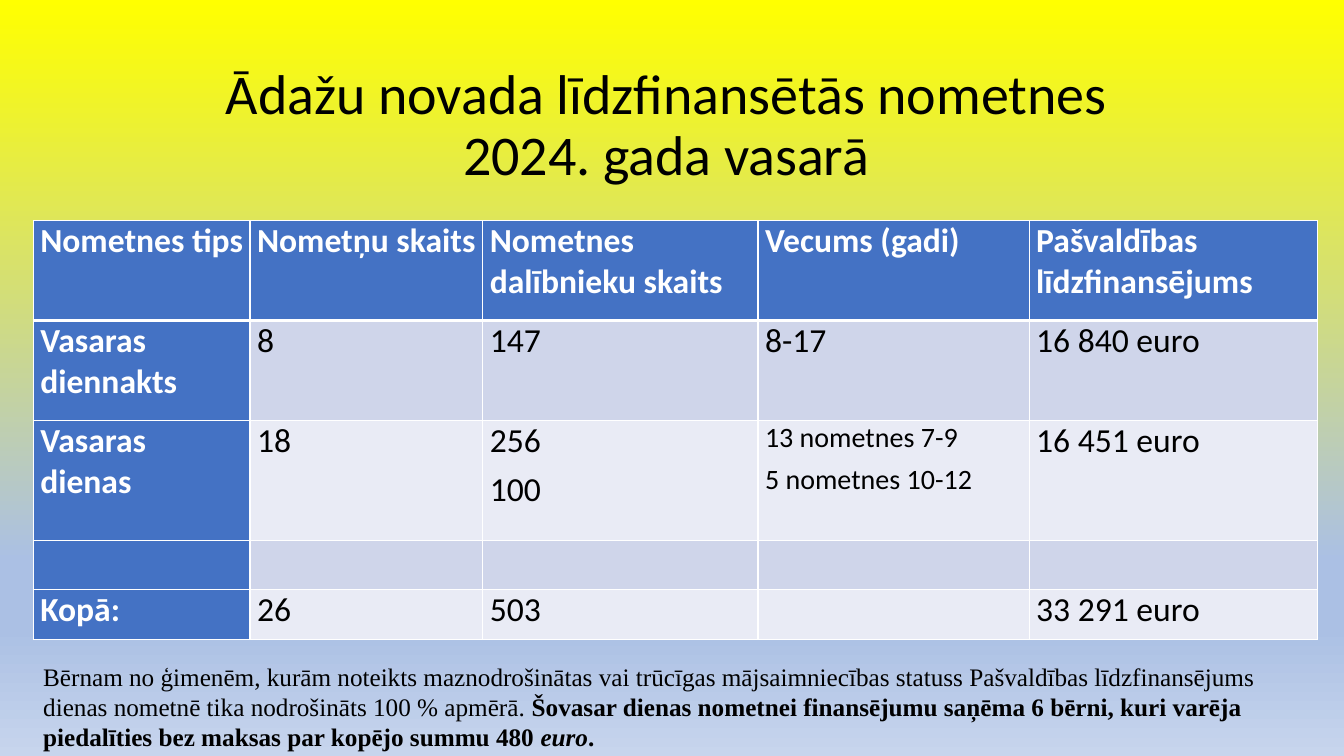
"""Build the slide on co-financed summer camps in Ādaži municipality in 2024."""
from dataclasses import dataclass

from lxml.etree import SubElement
from pptx import Presentation
from pptx.dml.color import RGBColor as Color
from pptx.enum.text import MSO_ANCHOR as Anchor
from pptx.enum.text import MSO_AUTO_SIZE as AutoSize
from pptx.enum.text import PP_ALIGN as Align
from pptx.oxml import parse_xml
from pptx.oxml.ns import qn
from pptx.util import Pt


@dataclass(frozen=True)
class Theme:
    sans: str = "Calibri"
    serif: str = "Times New Roman"
    black: str = "000000"
    white: str = "FFFFFF"
    blue: str = "4472C4"
    bands: tuple = ("E9EBF5", "CFD5EA")
    sky: tuple = ((0, "FFFF00"), (74, "ABC0E4"), (83, "ABC0E4"), (100, "C7D5ED"))
    title: int = 40
    table: int = 24
    ages: int = 20
    note: int = 18


theme = Theme()


def add_span(para, text, font, size, color, bold=False, italic=False):
    span = para.add_run()
    span.text = text
    span.font.name = font
    span.font.size = Pt(size)
    span.font.color.rgb = Color.from_string(color)
    span.font.bold = bold
    span.font.italic = italic


def add_border(cell, index, side, width):
    line = parse_xml(
        f'<a:{side} xmlns:a="http://schemas.openxmlformats.org/drawingml/2006/main" w="{Pt(width)}">'
        f'<a:solidFill><a:srgbClr val="{theme.white}"/></a:solidFill></a:{side}>'
    )
    cell._tc.get_or_add_tcPr().insert(index, line)


deck = Presentation()
deck.slide_width = Pt(960)
deck.slide_height = Pt(540)
page = deck.slides.add_slide(deck.slide_layouts[5])

backdrop = page.background.fill
backdrop.gradient()
backdrop.gradient_angle = 270
stops = page.background._cSld.find(".//" + qn("a:gsLst"))
for stop in list(stops):
    stops.remove(stop)
for percent, color in theme.sky:
    stop = SubElement(stops, qn("a:gs"), pos=str(percent * 1000))
    SubElement(stop, qn("a:srgbClr"), val=color)

title = page.shapes.title
title.left, title.top, title.width, title.height = Pt(35.3), Pt(0), Pt(895), Pt(181.4)
frame = title.text_frame
frame.word_wrap = True
frame.auto_size = AutoSize.NONE
frame.vertical_anchor = Anchor.BOTTOM
frame.margin_right = Pt(21)
frame.margin_bottom = Pt(47.5)
para = frame.paragraphs[0]
para.alignment = Align.CENTER
para.line_spacing = 0.9
add_span(para, "Ādažu novada līdzfinansētās nometnes", theme.sans, theme.title, theme.black)
para.add_line_break()
add_span(para, "2024. gada vasarā", theme.sans, theme.title, theme.black)

column_widths = [154.8, 166.3, 196.6, 193.7, 205.9]
row_heights = [71.3, 71.3, 85.7, 35.3, 35.3]
camps = [
    [["Nometnes tips"], ["Nometņu skaits"], ["Nometnes dalībnieku skaits"],
     ["Vecums (gadi)"], ["Pašvaldības līdzfinansējums"]],
    [["Vasaras diennakts"], ["8"], ["147"], ["8-17"], ["16 840 euro"]],
    [["Vasaras dienas"], ["18"], ["256", "100"],
     ["13 nometnes 7-9", "5 nometnes 10-12"], ["16 451 euro"]],
    [[], [], [], [], []],
    [["Kopā:"], ["26"], ["503"], [], ["33 291 euro"]],
]
table = page.shapes.add_table(
    len(row_heights), len(column_widths), Pt(23.8), Pt(157.7),
    Pt(sum(column_widths)), Pt(sum(row_heights)),
).table
table.first_col = True
for column, width in zip(table.columns, column_widths):
    column.width = Pt(width)
for row, height in zip(table.rows, row_heights):
    row.height = Pt(height)

for row_index, camp in enumerate(camps):
    for column_index, lines in enumerate(camp):
        cell = table.cell(row_index, column_index)
        heading = row_index == 0 or column_index == 0
        cell.fill.solid()
        cell.fill.fore_color.rgb = Color.from_string(
            theme.blue if heading else theme.bands[row_index % 2])
        cell.margin_left = cell.margin_right = Pt(5)
        cell.margin_top = cell.margin_bottom = Pt(0)
        top = 3 if row_index == 1 else 1
        bottom = 3 if row_index == 0 else 1
        for index, (side, width) in enumerate(
                [("lnL", 1), ("lnR", 1), ("lnT", top), ("lnB", bottom)]):
            add_border(cell, index, side, width)
        for line_index, text in enumerate(lines):
            frame = cell.text_frame
            para = frame.add_paragraph() if line_index else frame.paragraphs[0]
            para.alignment = Align.JUSTIFY
            para.space_after = Pt(6)
            size = theme.ages if "nometnes" in text else theme.table
            add_span(para, text, theme.sans, size,
                     theme.white if heading else theme.black, bold=heading)

note = page.shapes.add_textbox(Pt(23.8), Pt(468.7), Pt(917.3), Pt(72.7))
note.text_frame.word_wrap = True
note.text_frame.auto_size = AutoSize.SHAPE_TO_FIT_TEXT
para = note.text_frame.paragraphs[0]
for text, bold, italic in [
    ("Bērnam no ģimenēm, kurām noteikts maznodrošinātas vai trūcīgas mājsaimniecības statuss "
     "Pašvaldības līdzfinansējums dienas nometnē tika nodrošināts 100 % apmērā. ", False, False),
    ("Šovasar dienas nometnei finansējumu saņēma 6 bērni, kuri varēja piedalīties bez maksas "
     "par kopējo summu 480 ", True, False),
    ("euro", True, True),
    (".", True, False),
]:
    add_span(para, text, theme.serif, theme.note, theme.black, bold, italic)

deck.save("out.pptx")
